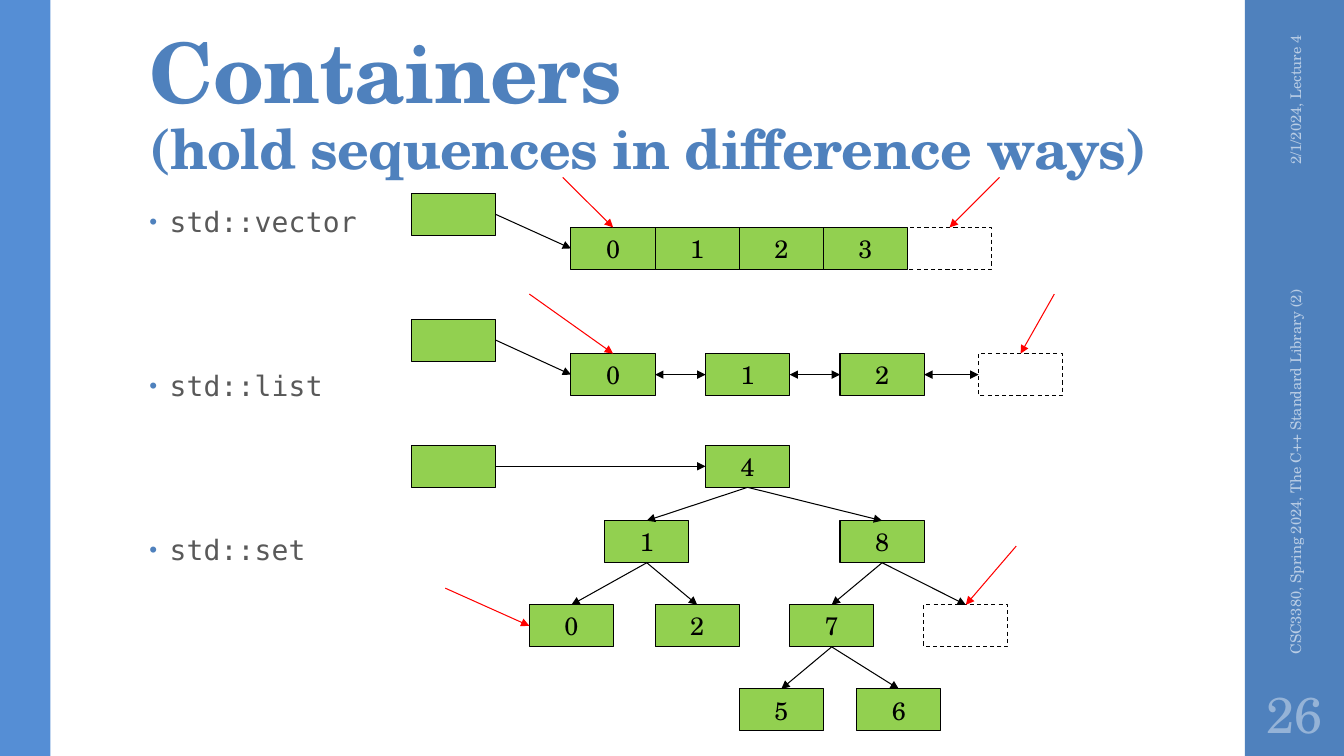
from lxml import etree
from pptx import Presentation
from pptx.dml import color
from pptx.enum import dml, shapes, text
from pptx.oxml import ns
from pptx.util import Cm, Pt

SERIF, MONO = "TeX Gyre Schola", "DejaVu Sans Mono"
BLUE, SKY, PALE, MIST = "4F81BD", "558ED5", "B9CDE5", "95B3D7"
GREEN, BLACK, RED, GRAY = "92D050", "000000", "FF0000", "595959"
WIDE, HIGH = 2.12, 1.06
TOP, LEFT, BASE, RIGHT = range(4)  # connection sites of a rectangle
ALIGN, MIDDLE = text.PP_ALIGN, text.MSO_ANCHOR.MIDDLE


def hue(code):
    return color.RGBColor.from_string(code)


def put(item, **vals):
    for key, val in vals.items():
        setattr(item, key, val)


def node(parent, tag, **vals):
    return etree.SubElement(parent, ns.qn(tag), vals)


def place(item, left, top, width, height):
    put(item, left=Cm(left), top=Cm(top), width=Cm(width), height=Cm(height))


def say(par, words, size, tint, face=SERIF, bold=False, space=0):
    """Add a run; space is the tracking in hundredths of a point."""
    run = par.add_run()
    run.text = words
    put(run.font, size=Pt(size), name=face, bold=bold)
    run.font.color.rgb = hue(tint)
    if space:
        run.font._element.set("spc", str(space))


def block(home, left, top, width, height, fill):
    """Add a plain rectangle; without a fill it is see-through."""
    spot = [Cm(n) for n in (left, top, width, height)]
    rect = home.shapes.add_shape(shapes.MSO_SHAPE.RECTANGLE, *spot)
    rect.shadow.inherit = False
    rect.line.fill.background()
    if fill:
        rect.fill.solid()
        rect.fill.fore_color.rgb = hue(fill)
    else:
        rect.fill.background()
    return rect


def cell(group, left, top, words="", fill=GREEN):
    """Add a container element, dashed when it has no fill."""
    rect = block(group, left, top, WIDE, HIGH, fill)
    rect.line.color.rgb = hue(BLACK)
    rect.line.width = Pt(0.75)
    if not fill:
        rect.line.dash_style = dml.MSO_LINE.DASH
    if words:
        put(rect.text_frame, word_wrap=False, vertical_anchor=MIDDLE)
        par = rect.text_frame.paragraphs[0]
        par.alignment = ALIGN.CENTER
        say(par, words, 18, BLACK)
    return rect


def arrow(group, start, end, site, tint=BLACK, both=False):
    """Join start, a point or a (cell, site) pair, to a site of the end cell."""
    free = tint == RED
    x, y = [Cm(n) for n in start] if free else (end.left, end.top)
    line = group.shapes.add_connector(shapes.MSO_CONNECTOR.STRAIGHT, x, y, x, y)
    if not free:
        line.begin_connect(*start)
    line.end_connect(end, site)
    line.line.color.rgb = hue(tint)
    line.line.width = Pt(0.75)
    props = line._element.spPr
    edge = props.find(ns.qn("a:ln"))
    for tag in ("a:headEnd", "a:tailEnd") if both else ("a:tailEnd",):
        node(edge, tag, type="triangle")
    node(props, "a:effectLst")


def label(slide, spot, words, size, tint, align, turn=0, inset=0.25):
    area = slide.shapes.add_textbox(*[Cm(n) for n in spot])
    area.rotation = turn
    put(area.text_frame, word_wrap=True, vertical_anchor=MIDDLE,
        margin_left=Cm(inset), margin_right=Cm(inset))
    par = area.text_frame.paragraphs[0]
    par.alignment = align
    say(par, words, size, tint)


def head(title):
    place(title, 3.51, 0.81, 26.92, 3.89)
    frame = title.text_frame
    put(frame, word_wrap=True, auto_size=text.MSO_AUTO_SIZE.NONE,
        vertical_anchor=text.MSO_ANCHOR.BOTTOM,
        margin_top=Cm(0.08), margin_bottom=Cm(0.13))
    par = frame.paragraphs[0]
    put(par, alignment=ALIGN.LEFT, line_spacing=0.9)
    say(par, "Containers", 59.4, BLUE, bold=True, space=-50)
    par.add_line_break()
    say(par, "(hold sequences in difference ways)", 39.6, BLUE, bold=True, space=-50)


def bullets(body, names):
    place(body, 3.51, 5.08, 23.88, 12.09)
    frame = body.text_frame
    put(frame, word_wrap=True, auto_size=text.MSO_AUTO_SIZE.NONE)
    for i, name in enumerate(names):
        par = frame.add_paragraph() if i else frame.paragraphs[0]
        put(par, line_spacing=0.95, space_after=Pt(2),
            space_before=Pt(92.3 if i else 14))
        say(par, name, 20, GRAY, MONO, space=10)
        props = par._p.get_or_add_pPr()
        props.set("marL", str(Cm(0.51)))
        props.set("indent", str(Cm(-0.51)))
        node(node(props, "a:buClr"), "a:srgbClr", val=BLUE)
        node(props, "a:buSzPct", val="80000")
        node(props, "a:buFont", typeface="Arial")
        node(props, "a:buChar", char="•")


def vector(group):
    root = cell(group, 10.37, 4.87)
    row = [cell(group, 14.39 + i * WIDE, 5.73, str(i)) for i in range(4)]
    end = cell(group, 14.39 + 4 * WIDE, 5.73, fill=None)
    arrow(group, (root, RIGHT), row[0], LEFT)
    arrow(group, (25.19, 4.47), end, TOP, RED)
    arrow(group, (14.18, 4.47), row[0], TOP, RED)


def chain(group):
    root = cell(group, 10.37, 8.04)
    row = [cell(group, 14.39 + i * 3.39, 8.91, str(i)) for i in range(3)]
    row.append(cell(group, 24.66, 8.91, fill=None))
    for one, two in zip(row, row[1:]):
        arrow(group, (one, RIGHT), two, LEFT, both=True)
    arrow(group, (root, RIGHT), row[0], LEFT)
    arrow(group, (13.34, 7.41), row[0], TOP, RED)
    arrow(group, (26.57, 7.41), row[-1], TOP, RED)


def tree(group):
    root = cell(group, 10.37, 11.22)
    rows = {11.22: {"4": 17.78},
            13.12: {"1": 15.24, "8": 21.17},
            15.24: {"0": 13.34, "2": 16.51, "7": 19.9},
            17.36: {"5": 18.63, "6": 21.59}}
    nodes = {key: cell(group, left, top, key)
             for top, row in rows.items() for key, left in row.items()}
    nodes["end"] = cell(group, 23.28, 15.24, fill=None)
    kids = {"4": "18", "1": "02", "8": ["7", "end"], "7": "56"}
    for key, pair in kids.items():
        for kid in pair:
            arrow(group, (nodes[key], BASE), nodes[kid], TOP)
    arrow(group, (root, RIGHT), nodes["4"], LEFT)
    arrow(group, (25.61, 13.76), nodes["end"], TOP, RED)
    arrow(group, (11.22, 14.82), nodes["0"], LEFT, RED)


def main():
    deck = Presentation()
    put(deck, slide_width=Cm(33.87), slide_height=Cm(19.05))
    slide = deck.slides.add_slide(deck.slide_layouts[1])
    head(slide.shapes.title)
    bullets(slide.placeholders[1], ["std::vector", "std::list", "std::set"])
    block(slide, 31.37, 0, 2.5, 19.05, BLUE)
    block(slide, 0, 0, 1.27, 19.05, SKY)
    label(slide, (30, 2.77, 5.28, 1.02), "2/1/2024, Lecture 4",
          10.5, PALE, ALIGN.RIGHT, 270)
    label(slide, (27.66, 11.25, 9.96, 1.02),
          "CSC3380, Spring 2024, The C++ Standard Library (2)",
          10.5, PALE, ALIGN.LEFT, 270)
    label(slide, (31.37, 17.15, 2.5, 1.65), "26", 36, MIST, ALIGN.CENTER, inset=0.13)
    for draw in (chain, tree, vector):
        draw(slide.shapes.add_group_shape())
    deck.save("out.pptx")


if __name__ == "__main__":
    main()
